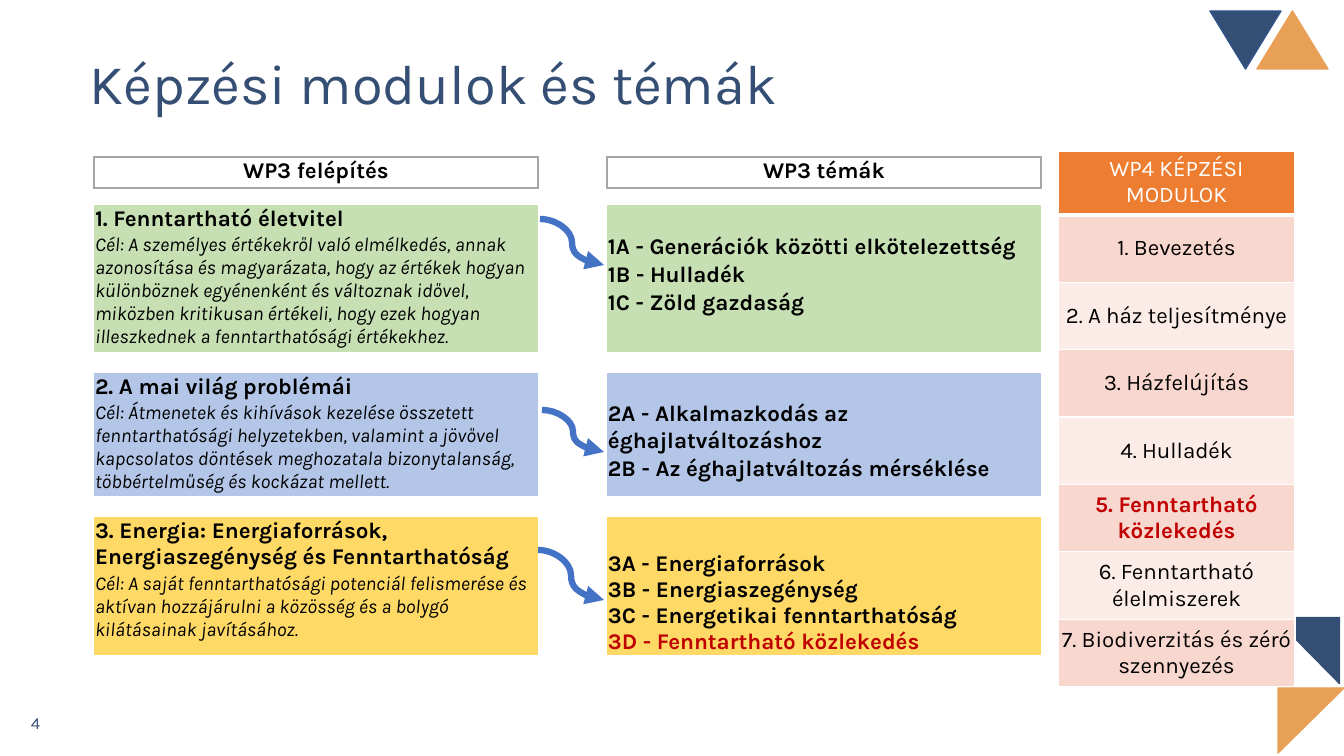
from lxml import etree
from pptx import Presentation
from pptx.dml.color import RGBColor
from pptx.enum.shapes import MSO_CONNECTOR, MSO_SHAPE
from pptx.enum.text import MSO_ANCHOR, PP_ALIGN
from pptx.oxml.ns import qn
from pptx.util import Emu, Pt

TRIANGLE, CURVE = MSO_SHAPE.ISOSCELES_TRIANGLE, MSO_CONNECTOR.CURVE
LEFT, CENTER = PP_ALIGN.LEFT, PP_ALIGN.CENTER
TOP, MIDDLE, BOTTOM = MSO_ANCHOR.TOP, MSO_ANCHOR.MIDDLE, MSO_ANCHOR.BOTTOM
FONT = "Karla"
NAVY, SAND, RED, BLACK, WHITE = "354F74", "E89F56", "C00000", "000000", "FFFFFF"
GREEN, BLUE, YELLOW, GRAY = "C6E0B4", "B3C6E7", "FFD966", "A6A6A6"
PLAIN_STYLE = "{2D5ABB26-0587-4C30-8999-92F81FD0307C}"

# Content
TITLE = "Képzési modulok és témák"
HEADERS = {0: "WP3 felépítés", 2: "WP3 témák"}
# Each section: first row, last row, fill, heading, goal
SECTIONS = [
    (2, 5, GREEN, "1. Fenntartható életvitel",
     "Cél: A személyes értékekről való elmélkedés, annak azonosítása és magyarázata, "
     "hogy az értékek hogyan különböznek egyénenként és változnak idővel, miközben "
     "kritikusan értékeli, hogy ezek hogyan illeszkednek a fenntarthatósági értékekhez."),
    (7, 9, BLUE, "2. A mai világ problémái",
     "Cél: Átmenetek és kihívások kezelése összetett fenntarthatósági helyzetekben, "
     "valamint a jövővel kapcsolatos döntések meghozatala bizonytalanság, "
     "többértelműség és kockázat mellett."),
    (11, 12, YELLOW, "3. Energia: Energiaforrások, Energiaszegénység és Fenntarthatóság",
     "Cél: A saját fenntarthatósági potenciál felismerése és aktívan hozzájárulni "
     "a közösség és a bolygó kilátásainak javításához."),
]
TOPICS = {
    3: ["1A - Generációk közötti elkötelezettség"],
    4: ["1B - Hulladék"],
    5: ["1C - Zöld gazdaság"],
    8: ["2A - Alkalmazkodás az éghajlatváltozáshoz"],
    9: ["2B - Az éghajlatváltozás mérséklése"],
    11: ["3A - Energiaforrások", "3B - Energiaszegénység",
         "3C - Energetikai fenntarthatóság", "3D - Fenntartható közlekedés"],
}
MODULES = ["1. Bevezetés", "2. A ház teljesítménye", "3. Házfelújítás", "4. Hulladék",
           "5. Fenntartható közlekedés", "6. Fenntartható élelmiszerek",
           "7. Biodiverzitás és zéró szennyezés"]
HIGHLIGHTS = ("3D - Fenntartható közlekedés", "5. Fenntartható közlekedés")

# Layout in px
PLAN_COLUMNS = [444, 69, 434]
PLAN_ROWS = [31, 17, 27, 27, 27, 62, 21, 27, 54, 39, 21, 53, 84]
MODULE_ROWS = [62] + [472 / len(MODULES)] * len(MODULES)
ARROWS = [(540, 219, 604, 265), (542, 410, 604, 452), (538, 550, 604, 600)]
# Left, top, width, height, rotation, tip position, fill, line
TRIANGLES = [
    (1257, 11, 71, 58, 0, 0.5, SAND, SAND),
    (1278, 688, 66, 65, 180, 1, SAND, SAND),
    (1274, 618, 66, 65, 270, 1, NAVY, NAVY),
    (1210, 11, 71, 58, 180, 0.5, NAVY, "31538F"),
]


def px(length):
    return Emu(round(length * 914400 / 100.8))


def rgb(value):
    return RGBColor.from_string(value)


def write(frame, lines, size=16, color=BLACK, bold=False, italic=False,
          align=LEFT, spacing=None):
    for index, line in enumerate(lines):
        para = frame.add_paragraph() if index else frame.paragraphs[0]
        para.alignment = align
        para.line_spacing = spacing
        span = para.add_run()
        span.text = line
        font = span.font
        font.name, font.size, font.bold, font.italic = FONT, Pt(size), bold, italic
        font.color.rgb = rgb(RED if line in HIGHLIGHTS else color)


def add_text(page, left, top, width, height, text, **style):
    frame = page.shapes.add_textbox(px(left), px(top), px(width), px(height)).text_frame
    frame.word_wrap = True
    frame.vertical_anchor = MIDDLE
    write(frame, [text], **style)


def add_table(page, left, top, columns, rows):
    frame = page.shapes.add_table(len(rows), len(columns), px(left), px(top),
                                  px(sum(columns)), px(sum(rows)))
    table = frame.table
    table.first_row = table.horz_banding = False
    table._tbl.tblPr.find(qn("a:tableStyleId")).text = PLAIN_STYLE
    for column, width in zip(table.columns, columns):
        column.width = px(width)
    for row, height in zip(table.rows, rows):
        row.height = px(height)
    return table


def set_cell(cell, fill=None, margins=(1, 1, 1, 0), anchor=TOP):
    cell.margin_left, cell.margin_top, cell.margin_right, cell.margin_bottom = map(px, margins)
    cell.vertical_anchor = anchor
    if fill:
        cell.fill.solid()
        cell.fill.fore_color.rgb = rgb(fill)
    else:
        cell.fill.background()


def set_borders(cell, color, **widths):
    properties = cell._tc.get_or_add_tcPr()
    for index, side in enumerate("LRTB"):
        line = etree.Element(qn("a:ln" + side), w=str(Pt(widths[side])))
        fill = etree.SubElement(line, qn("a:solidFill"))
        etree.SubElement(fill, qn("a:srgbClr"), val=color)
        properties.insert(index, line)


def add_plan(page):
    table = add_table(page, 94, 157, PLAN_COLUMNS, PLAN_ROWS)
    for cell in table.iter_cells():
        set_cell(cell)
        # Small end mark keeps empty rows low
        etree.SubElement(cell.text_frame.paragraphs[0]._p, qn("a:endParaRPr"), sz="400")
    for column, text in HEADERS.items():
        cell = table.cell(0, column)
        write(cell.text_frame, [text], bold=True, align=CENTER)
        set_borders(cell, GRAY, L=2.25, R=2.25, T=2.25, B=2.25)
    for first, last, fill, heading, goal in SECTIONS:
        for row in range(first, last + 1):
            for column in HEADERS:
                set_cell(table.cell(row, column), fill)
        write(table.cell(first, 0).text_frame, [heading], bold=True)
        goal_cell = table.cell(first + 1, 0)
        if last > first + 1:
            goal_cell.merge(table.cell(last, 0))
        write(goal_cell.text_frame, [goal], size=14, italic=True)
    for row, lines in TOPICS.items():
        cell = table.cell(row, 2)
        if len(lines) > 1:
            cell.merge(table.cell(row + 1, 2))
            cell.vertical_anchor = BOTTOM
        write(cell.text_frame, lines, bold=True)


def add_modules(page):
    table = add_table(page, 1058, 151, [237], MODULE_ROWS)
    header = table.cell(0, 0)
    set_cell(header, "ED7D31", margins=(10, 5, 10, 5))
    set_borders(header, WHITE, L=1, R=1, T=1, B=3)
    write(header.text_frame, ["WP4 KÉPZÉSI MODULOK"], color=WHITE, align=CENTER)
    for row, module in enumerate(MODULES, 1):
        cell = table.cell(row, 0)
        set_cell(cell, "F8D7CE" if row % 2 else "FCECE8", (3, 2, 3, 2), MIDDLE)
        set_borders(cell, WHITE, L=1, R=1, T=3 if row == 1 else 1, B=1)
        write(cell.text_frame, [module], bold=module in HIGHLIGHTS, align=CENTER)


def add_triangle(page, left, top, width, height, rotation, tip, fill, line):
    shape = page.shapes.add_shape(TRIANGLE, px(left), px(top), px(width), px(height))
    shape.shadow.inherit = False
    shape.rotation = rotation
    shape.adjustments[0] = tip
    shape.fill.solid()
    shape.fill.fore_color.rgb = rgb(fill)
    shape.line.color.rgb = rgb(line)
    shape.line.width = Pt(1)


def add_arrow(page, *ends):
    arrow = page.shapes.add_connector(CURVE, *map(px, ends))
    arrow.line.color.rgb = rgb("4472C4")
    arrow.line.width = Pt(4.5)
    etree.SubElement(arrow.line._get_or_add_ln(), qn("a:tailEnd"), type="triangle")
    etree.SubElement(arrow._element.spPr, qn("a:effectLst"))


def main():
    deck = Presentation()
    deck.slide_width, deck.slide_height = px(1344), px(756)
    page = deck.slides.add_slide(deck.slide_layouts[6])
    add_text(page, 21, 703, 302, 40, "4", size=12, color=NAVY)
    for triangle in TRIANGLES:
        add_triangle(page, *triangle)
    add_text(page, 80, 13, 1159, 146, TITLE, size=40, color=NAVY, spacing=0.9)
    add_plan(page)
    for ends in ARROWS:
        add_arrow(page, *ends)
    add_modules(page)
    deck.save("out.pptx")


if __name__ == "__main__":
    main()
